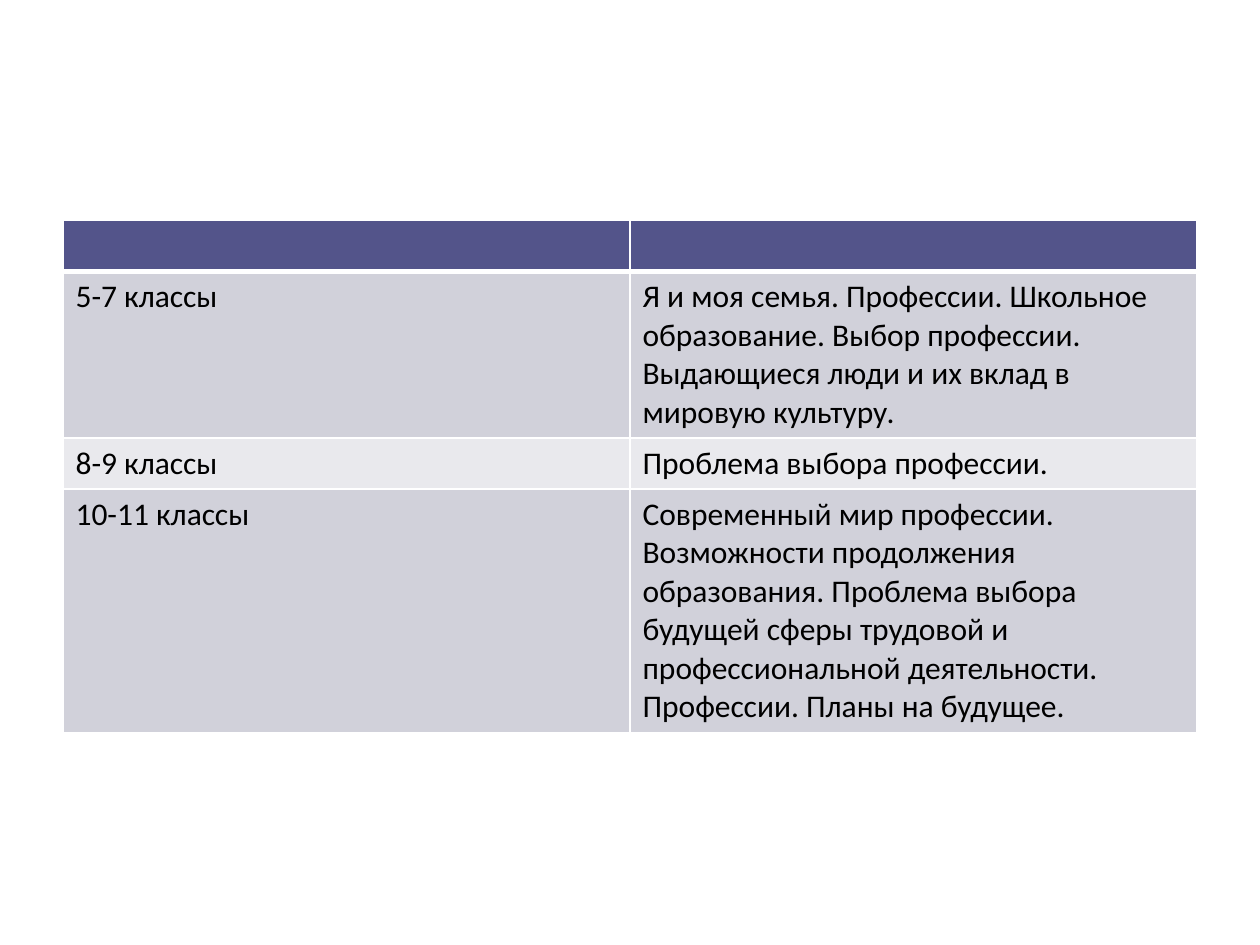
"""Build a slide with a table of school topics about professions by grade."""
from lxml.etree import SubElement
from pptx import Presentation
from pptx.dml.color import RGBColor
from pptx.oxml.ns import qn
from pptx.util import Pt

ROWS = [
    ("", ""),
    ("5-7 классы", "Я и моя семья. Профессии. Школьное образование. Выбор профессии. "
                   "Выдающиеся люди и их вклад в мировую культуру."),
    ("8-9 классы", "Проблема выбора профессии."),
    ("10-11 классы", "Современный мир профессии. Возможности продолжения образования. "
                     "Проблема выбора будущей сферы трудовой и профессиональной "
                     "деятельности. Профессии. Планы на будущее."),
]
HEADER_FILL = "53548A"
BAND_FILLS = ("E9E9ED", "D1D1DA")
BORDER, TEXT = "FFFFFF", "000000"
LEFT, TOP, WIDTH, ROW_HEIGHT = 36, 126, 648, 29.2


def color(value):
    return RGBColor.from_string(value)


def set_borders(cell, widths):
    properties = cell._tc.get_or_add_tcPr()
    for side, width in widths.items():
        line = SubElement(properties, qn(f"a:ln{side}"), w=str(Pt(width)))
        fill = SubElement(line, qn("a:solidFill"))
        SubElement(fill, qn("a:srgbClr"), val=BORDER)


def fill_cell(cell, text, row):
    set_borders(cell, {"L": 1, "R": 1, "T": 3 if row == 1 else 1, "B": 3 if row == 0 else 1})
    cell.fill.solid()
    cell.fill.fore_color.rgb = color(BAND_FILLS[row % 2] if row else HEADER_FILL)
    cell.text = text
    font = cell.text_frame.paragraphs[0].font
    font.name, font.size, font.bold = "Calibri", Pt(18), False
    font.color.rgb = color(TEXT)


def main():
    presentation = Presentation()
    presentation.slide_width, presentation.slide_height = Pt(720), Pt(540)
    slide = presentation.slides.add_slide(presentation.slide_layouts[6])
    table = slide.shapes.add_table(
        len(ROWS), len(ROWS[0]), Pt(LEFT), Pt(TOP), Pt(WIDTH), Pt(ROW_HEIGHT * len(ROWS))
    ).table
    for row, texts in enumerate(ROWS):
        table.rows[row].height = Pt(ROW_HEIGHT)
        for column, text in enumerate(texts):
            fill_cell(table.cell(row, column), text, row)
    presentation.save("out.pptx")


if __name__ == "__main__":
    main()
